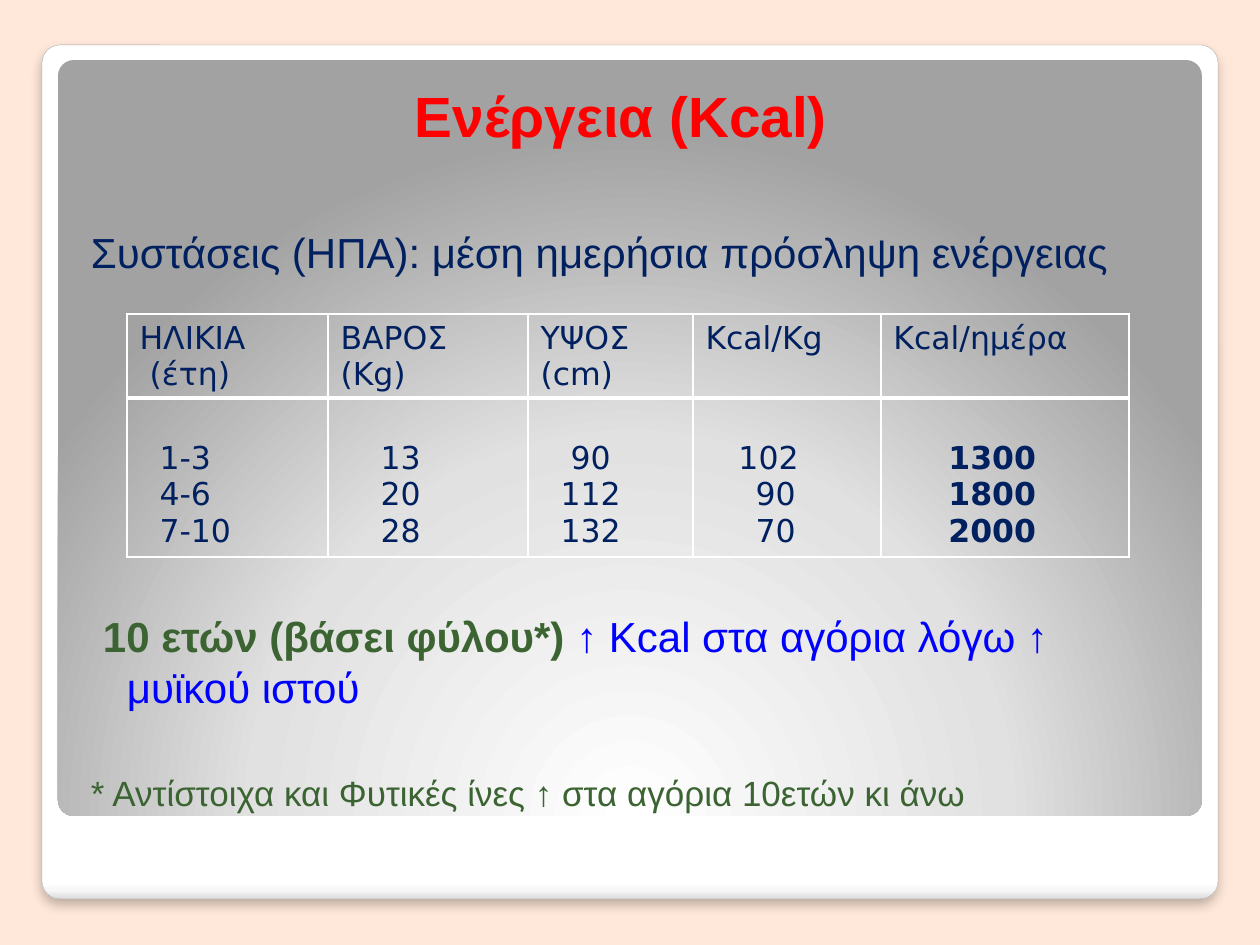
from lxml import etree
from pptx import Presentation
from pptx.dml.color import RGBColor
from pptx.enum.shapes import MSO_SHAPE
from pptx.enum.text import MSO_ANCHOR, PP_ALIGN
from pptx.oxml import parse_xml
from pptx.oxml.ns import qn
from pptx.util import Emu, Pt

ROUNDED = MSO_SHAPE.ROUNDED_RECTANGLE
TOP, BOTTOM = MSO_ANCHOR.TOP, MSO_ANCHOR.BOTTOM
CENTER, LEFT = PP_ALIGN.CENTER, PP_ALIGN.LEFT
PX_PER_INCH = 126
DRAWING_NS = 'xmlns:a="http://schemas.openxmlformats.org/drawingml/2006/main"'
COLORS = {
    "page": "FFE8D9", "white": "FFFFFF", "edge": "A4A4A4", "shadow": "000000",
    "title": "FF0000", "navy": "002060", "blue": "0000FF", "green": "3B6432",
    "pale": "F7F7F7", "rim": "DADADA", "silver": "E1E1E1", "gray": "A2A2A2",
}
CARD_STOPS = [(0, "white"), (98, "white"), (99, "pale"), (100, "rim")]
PANEL_STOPS = [(0, "white"), (55, "silver"), (100, "gray")]
LINEAR = '<a:lin ang="5400000" scaled="0"/>'
RADIAL = ('<a:path path="circle"><a:fillToRect l="50000" t="175000" '
          'r="50000" b="-75000"/></a:path>')

COLUMN_WIDTHS = [201, 200, 165, 188, 248]
ROW_HEIGHTS = [84, 159]
# Each cell lists its lines as (text, indent in px)
HEADER = [
    [("ΗΛΙΚΙΑ", 0), ("(έτη)", 10)],
    [("ΒΑΡΟΣ", 0), ("(Kg)", 0)],
    [("ΥΨΟΣ", 0), ("(cm)", 0)],
    [("Kcal/Kg", 0)],
    [("Kcal/ημέρα", 0)],
]
VALUES = [
    [("1-3", 20), ("4-6", 20), ("7-10", 20)],
    [("13", 40), ("20", 40), ("28", 40)],
    [("90", 30), ("112", 20), ("132", 20)],
    [("102", 33), ("90", 50), ("70", 50)],
    [("1300", 55), ("1800", 55), ("2000", 55)],
]


def px(length):
    return Emu(round(length * 914400 / PX_PER_INCH))


def rgb(name):
    return RGBColor.from_string(COLORS[name])


def style_font(font, name, size, color, bold=False):
    font.name, font.size, font.bold = name, Pt(size), bold
    font.color.rgb = rgb(color)


def indent(paragraph, left, first=0):
    properties = paragraph._p.get_or_add_pPr()
    properties.set("marL", str(px(left)))
    properties.set("indent", str(px(first)))


def add_panel(slide, box, stops, direction):
    panel = slide.shapes.add_shape(ROUNDED, *map(px, box))
    panel.adjustments[0] = 0.021
    panel.shadow.inherit = False
    panel.line.fill.background()
    stop_xml = "".join(
        f'<a:gs pos="{position * 1000}"><a:srgbClr val="{COLORS[color]}"/></a:gs>'
        for position, color in stops)
    panel._element.spPr.find(qn("a:prstGeom")).addnext(parse_xml(
        f'<a:gradFill {DRAWING_NS} rotWithShape="1"><a:gsLst>{stop_xml}</a:gsLst>'
        f'{direction}</a:gradFill>'))
    return panel


def add_card_edge(card):
    card.line.color.rgb = rgb("edge")
    card.line.width = Pt(0.16)
    effects = card._element.spPr.find(qn("a:effectLst"))
    effects.append(parse_xml(
        f'<a:outerShdw {DRAWING_NS} blurRad="{Pt(6)}" dist="{Pt(4)}" dir="5400000" '
        f'algn="t" rotWithShape="0"><a:srgbClr val="{COLORS["shadow"]}">'
        '<a:alpha val="25000"/></a:srgbClr></a:outerShdw>'))


def add_text_frame(slide, box, insets, anchor):
    frame = slide.shapes.add_textbox(*map(px, box)).text_frame
    frame.word_wrap = True
    frame.vertical_anchor = anchor
    (frame.margin_left, frame.margin_top,
     frame.margin_right, frame.margin_bottom) = map(px, insets)
    return frame


def add_title(slide):
    frame = add_text_frame(slide, (64, 78, 1128, 78), (13, 6, 27, 7), BOTTOM)
    title = frame.paragraphs[0]
    title.text = "Ενέργεια (Kcal)"
    title.alignment = CENTER
    style_font(title.font, "Arial", 32.4, "title", True)


def add_body(slide):
    frame = add_text_frame(slide, (66, 160, 1128, 708), (25, 67, 13, 6), TOP)
    # Runs, first-line offset, space before in points, size
    lines = [
        ([("Συστάσεις (ΗΠΑ): μέση ημερήσια πρόσληψη ενέργειας", "navy", False)],
         -36, 0, 24),
        ([("10 ετών (βάσει φύλου*) ", "green", True),
          ("↑ Kcal στα αγόρια λόγω ↑ μυϊκού ιστού", "blue", False)],
         -24, 190.5, 24),
        ([("* Αντίστοιχα και Φυτικές ίνες ↑ στα αγόρια 10ετών κι άνω",
           "green", False)], -36, 34, 20),
    ]
    for number, (runs, first, space, size) in enumerate(lines):
        paragraph = frame.add_paragraph() if number else frame.paragraphs[0]
        paragraph.space_before = Pt(space)
        indent(paragraph, 36, first)
        for text, color, bold in runs:
            run = paragraph.add_run()
            run.text = text
            style_font(run.font, "Arial", size, color, bold)


def set_border(cell, side, points):
    properties = cell._tc.get_or_add_tcPr()
    line = etree.SubElement(properties, qn(f"a:ln{side}"), w=str(Pt(points)))
    fill = etree.SubElement(line, qn("a:solidFill"))
    etree.SubElement(fill, qn("a:srgbClr"), val=COLORS["white"])


def fill_cell(cell, lines, borders, bold, top_margin):
    for side, points in borders.items():
        set_border(cell, side, points)
    cell.fill.background()
    cell.vertical_anchor = TOP
    cell.margin_top, cell.margin_bottom = px(top_margin), px(2)
    frame = cell.text_frame
    for number, (text, left) in enumerate(lines):
        paragraph = frame.add_paragraph() if number else frame.paragraphs[0]
        paragraph.text = text
        paragraph.alignment = LEFT
        indent(paragraph, left)
        style_font(paragraph.font, "DejaVu Sans", 18, "navy", bold)


def add_energy_table(slide):
    table = slide.shapes.add_table(
        2, len(COLUMN_WIDTHS), px(127), px(314),
        px(sum(COLUMN_WIDTHS)), px(sum(ROW_HEIGHTS))).table
    table.first_row = table.horz_banding = False
    for row, height in zip(table.rows, ROW_HEIGHTS):
        row.height = px(height)
    last = len(COLUMN_WIDTHS) - 1
    for index, width in enumerate(COLUMN_WIDTHS):
        table.columns[index].width = px(width)
        fill_cell(table.cell(0, index), HEADER[index],
                  {"L": 1, "R": 1, "T": 1, "B": 3}, False, 6)
        fill_cell(table.cell(1, index), VALUES[index],
                  {"L": 1, "R": 1, "T": 3, "B": 1}, index == last, 42)


def main():
    presentation = Presentation()
    presentation.slide_width, presentation.slide_height = px(1260), px(945)
    slide = presentation.slides.add_slide(presentation.slide_layouts[6])
    slide.background.fill.solid()
    slide.background.fill.fore_color.rgb = rgb("page")

    # Framed backdrop
    card = add_panel(slide, (42, 45, 1176, 854), CARD_STOPS, LINEAR)
    add_card_edge(card)
    add_panel(slide, (58, 60, 1144, 756), PANEL_STOPS, RADIAL)

    # Content
    add_title(slide)
    add_body(slide)
    add_energy_table(slide)
    presentation.save("out.pptx")


if __name__ == "__main__":
    main()
